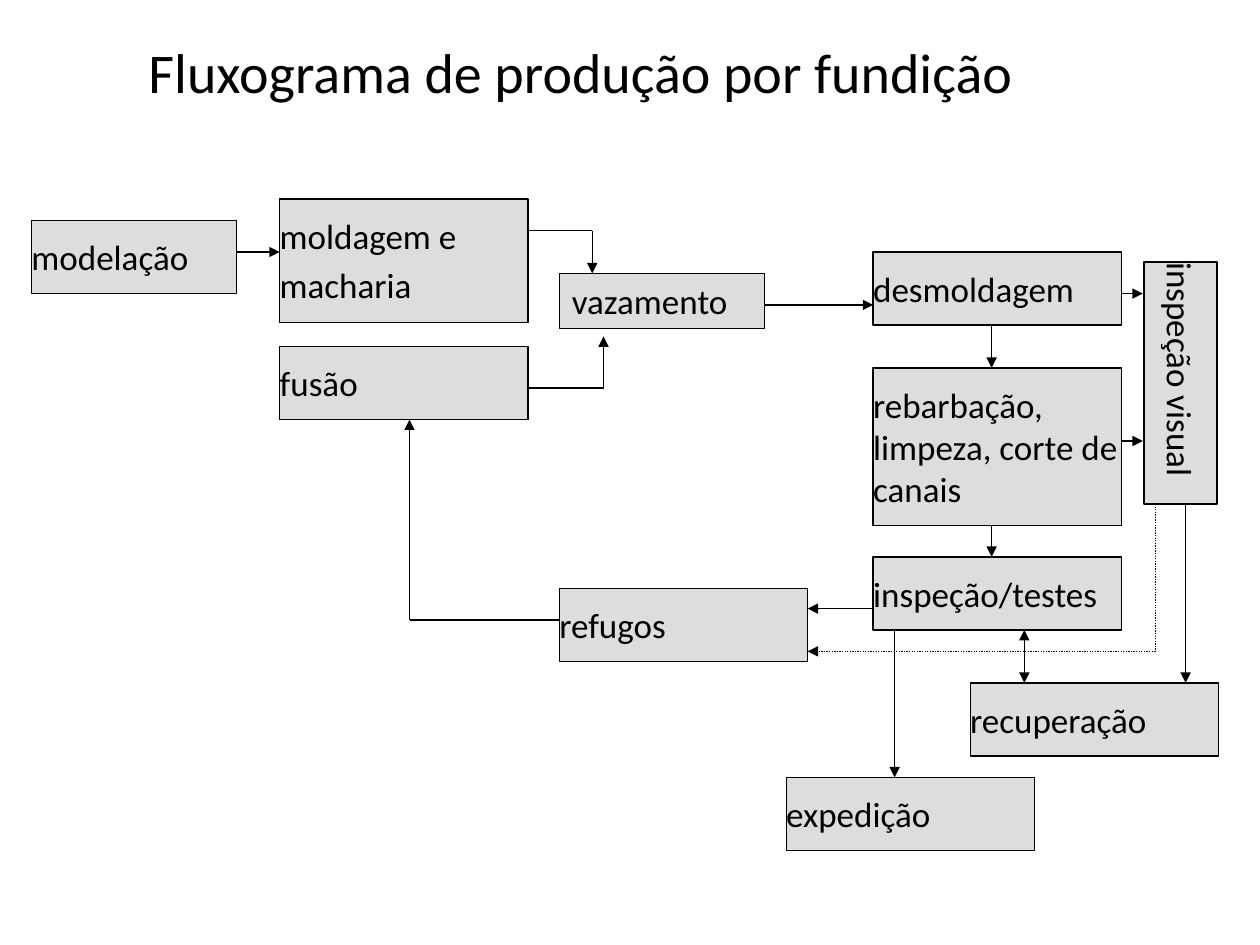
from dataclasses import dataclass
from itertools import pairwise

from lxml import etree
from pptx import Presentation
from pptx.dml.color import RGBColor
from pptx.enum.dml import MSO_LINE
from pptx.enum.shapes import MSO_CONNECTOR, MSO_SHAPE
from pptx.enum.text import MSO_ANCHOR, MSO_AUTO_SIZE, PP_ALIGN
from pptx.oxml.ns import qn
from pptx.util import Inches, Pt

RECTANGLE = MSO_SHAPE.RECTANGLE
STRAIGHT = MSO_CONNECTOR.STRAIGHT
DOTTED = MSO_LINE.ROUND_DOT
LEFT = PP_ALIGN.LEFT
TOP = MSO_ANCHOR.TOP
GROW = MSO_AUTO_SIZE.SHAPE_TO_FIT_TEXT

FONT = "Calibri"
COLORS = {"ink": "000000", "box": "DDDDDD"}
LINE_WIDTH = Pt(0.75)
BOX_WIDTH, BOX_HEIGHT = 1.97, 0.58


@dataclass(frozen=True)
class Step:
    text: str
    left: float
    top: float
    width: float = BOX_WIDTH
    height: float = BOX_HEIGHT
    rotation: float = 0
    side_inset: float = 0
    vertical_inset: float = 0.12
    trailing_size: float | None = None  # size of a closing space, opens the last line


@dataclass(frozen=True)
class Route:
    points: tuple[tuple[float, float], ...]
    both_ends: bool = False
    dotted: bool = False


STEPS = (
    Step("modelação", 0.25, 1.75, width=1.63),
    Step("moldagem e macharia", 2.22, 1.58, height=0.98, trailing_size=24),
    Step("fusão", 2.22, 2.75),
    Step("vazamento", 4.44, 2.17, width=1.63, height=0.44,
         side_inset=0.1, vertical_inset=0.05),
    Step("desmoldagem", 6.93, 2),
    Step("rebarbação, limpeza, corte de canais", 6.93, 2.92, height=1.25),
    Step("inspeção/testes", 6.93, 4.42),
    Step("inspeção visual", 8.41, 2.75, width=1.92, rotation=90),
    Step("recuperação", 7.7, 5.42),
    Step("expedição", 6.24, 6.17),
    Step("refugos", 4.44, 4.67),
)

# Each route ends in an arrowhead at its last point
ROUTES = (
    Route(((1.88, 2), (2.22, 2))),
    Route(((4.19, 3.08), (4.79, 3.08), (4.79, 2.67))),
    Route(((4.19, 1.83), (4.7, 1.83), (4.7, 2.17))),
    Route(((6.07, 2.42), (6.93, 2.42))),
    Route(((7.87, 2.58), (7.87, 2.92))),
    Route(((7.87, 4.17), (7.87, 4.42))),
    Route(((8.13, 5), (8.13, 5.42)), both_ends=True),
    Route(((6.93, 4.83), (6.41, 4.83))),
    Route(((7.1, 5), (7.1, 6.17))),
    Route(((4.44, 4.92), (3.25, 4.92), (3.25, 3.33))),
    Route(((8.9, 2.33), (9.07, 2.33))),
    Route(((8.9, 3.5), (9.07, 3.5))),
    Route(((9.41, 4), (9.41, 5.42))),
    Route(((9.17, 4), (9.17, 5.17), (6.41, 5.17)), dotted=True),
)


def color(name: str) -> RGBColor:
    return RGBColor.from_string(COLORS[name])


def write_text(shape, text: str, *, size: float = 20, side_inset: float = 0.1,
               vertical_inset: float = 0.05,
               trailing_size: float | None = None) -> None:
    frame = shape.text_frame
    frame.word_wrap = True
    frame.auto_size = GROW
    frame.vertical_anchor = TOP
    frame.margin_left = frame.margin_right = Inches(side_inset)
    frame.margin_top = frame.margin_bottom = Inches(vertical_inset)
    paragraph = frame.paragraphs[0]
    paragraph.alignment = LEFT
    pieces = [(text, size)]
    if trailing_size:
        pieces.append((" ", trailing_size))
    for piece, points in pieces:
        run = paragraph.add_run()
        run.text = piece
        run.font.name = FONT
        run.font.size = Pt(points)
        run.font.color.rgb = color("ink")


def draw_step(slide, step: Step) -> None:
    shape = slide.shapes.add_shape(
        RECTANGLE, Inches(step.left), Inches(step.top),
        Inches(step.width), Inches(step.height))
    shape.rotation = step.rotation
    shape.shadow.inherit = False
    shape.fill.solid()
    shape.fill.fore_color.rgb = color("box")
    shape.line.color.rgb = color("ink")
    shape.line.width = LINE_WIDTH
    write_text(shape, step.text, side_inset=step.side_inset,
               vertical_inset=step.vertical_inset,
               trailing_size=step.trailing_size)


def add_arrowhead(connector, end: str) -> None:
    line = connector.line._get_or_add_ln()
    etree.SubElement(line, qn(f"a:{end}"), type="triangle")


def draw_route(slide, route: Route) -> None:
    for start, finish in pairwise(route.points):
        connector = slide.shapes.add_connector(
            STRAIGHT, *(Inches(value) for value in start + finish))
        connector.line.color.rgb = color("ink")
        connector.line.width = LINE_WIDTH
        if route.dotted:
            connector.line.dash_style = DOTTED
        if route.both_ends:
            add_arrowhead(connector, "headEnd")
        if finish == route.points[-1]:
            add_arrowhead(connector, "tailEnd")
        etree.SubElement(connector._element.spPr, qn("a:effectLst"))


def main() -> None:
    presentation = Presentation()
    presentation.slide_width = Inches(10)
    presentation.slide_height = Inches(7.5)
    slide = presentation.slides.add_slide(presentation.slide_layouts[6])

    # Title
    title = slide.shapes.add_textbox(
        Inches(1.08), Inches(0.25), Inches(8.25), Inches(0.64))
    write_text(title, "Fluxograma de produção por fundição", size=32)

    # Production steps
    for step in STEPS:
        draw_step(slide, step)

    # Flow between the steps
    for route in ROUTES:
        draw_route(slide, route)

    presentation.save("out.pptx")


if __name__ == "__main__":
    main()
